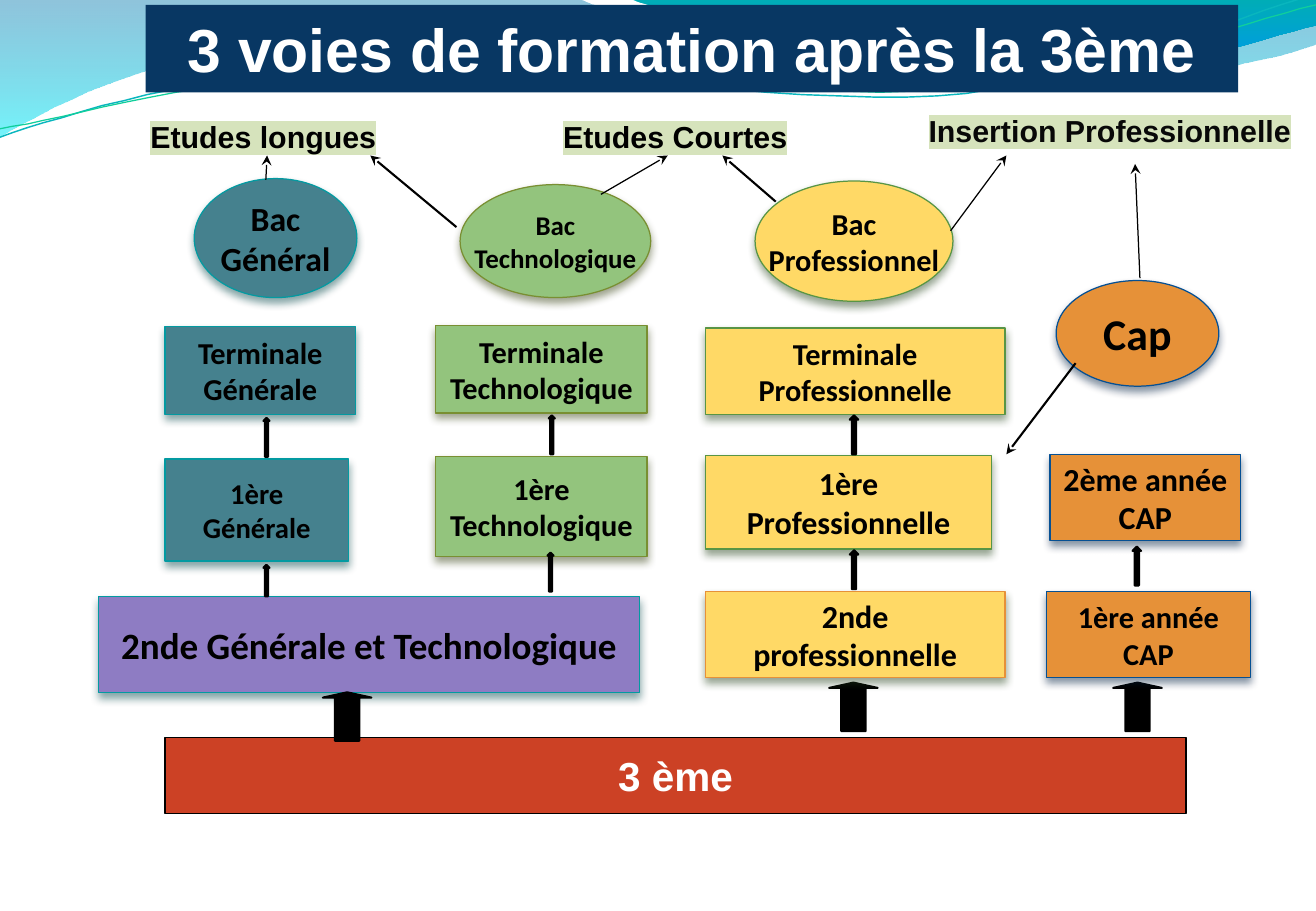
from lxml import etree
from pptx import Presentation
from pptx import util as u
from pptx.dml.color import RGBColor
from pptx.enum import shapes, text
from pptx.oxml.ns import qn

PX = 9144  # EMU in one px (100 px to the inch)
COLORS = {
    "black": "000000", "white": "FFFFFF", "navy": "083763", "red": "CC4125",
    "label": "080808", "highlight": "D6E3BC",
    "sky_top": "0079AF", "sky_bottom": "00EBF8",
    "sea_top": "00ADB6", "sea_bottom": "009BE5",
    "strand_teal": "09B6BE", "strand_green": "10CF9B",
}
# Each pathway: fill, line, shadow
PATHWAYS = {
    "general": ("45818E", "039AA1", "004548"),
    "techno": ("93C47D", "798F32", "343F11"),
    "pro": ("FFD966", "599545", "24421A"),
    "entry_pro": ("FFD966", "E69138", "24421A"),
    "cap": ("E69138", "065093", "002041"),
    "common": ("8E7CC3", "039AA1", "004548"),
}


def rgb(value):
    return RGBColor.from_string(COLORS.get(value, value))


def px(*lengths):
    return [u.Emu(round(length * PX)) for length in lengths]


def child(parent, tag, **attributes):
    node = etree.SubElement(parent, qn(tag))
    for key, value in attributes.items():
        node.set(key, str(value))
    return node


def write(shape, words, size, font="Calibri", color="black", align=text.PP_ALIGN.CENTER, wrap=True):
    frame = shape.text_frame
    frame.text = words
    frame.word_wrap = wrap
    frame.auto_size = text.MSO_AUTO_SIZE.NONE
    frame.vertical_anchor = text.MSO_ANCHOR.MIDDLE
    frame.margin_left = frame.margin_right = px(10)[0]
    frame.margin_top = frame.margin_bottom = px(5)[0]
    paragraph = frame.paragraphs[0]
    paragraph.alignment = align
    for run in paragraph.runs:
        run.font.size, run.font.name, run.font.bold = u.Pt(size), font, True
        run.font.color.rgb = rgb(color)


def block(slide, kind, box, fill, line, width=0.75, shadow=None):
    shape = slide.shapes.add_shape(kind, *px(*box))
    shape.shadow.inherit = False
    shape.fill.solid()
    shape.fill.fore_color.rgb = rgb(fill)
    shape.line.color.rgb = rgb(line)
    shape.line.width = u.Pt(width)
    if shadow:
        effects = shape._element.spPr.find(qn("a:effectLst"))
        outer = child(effects, "a:outerShdw", blurRad=u.Pt(5), dist=u.Pt(3), dir=5400000, rotWithShape=0)
        child(child(outer, "a:srgbClr", val=shadow), "a:alpha", val=47000)
    return shape


def up_arrow(slide, box, head=0.5):
    arrow = block(slide, shapes.MSO_SHAPE.UP_ARROW, box, "black", "black", 1.25)
    arrow.adjustments[0], arrow.adjustments[1] = 0.5, head


def trace(start, segments, steps=16):
    """Points of an outline: one point is a line, three are a Bézier curve."""
    points = [start]
    for segment in segments:
        if len(segment) == 1:
            points += segment
            continue
        corners = [points[-1], *segment]
        for step in range(1, steps + 1):
            t = step / steps
            weights = ((1 - t) ** 3, 3 * t * (1 - t) ** 2, 3 * t * t * (1 - t), t ** 3)
            points.append(tuple(sum(w * c[axis] for w, c in zip(weights, corners)) for axis in (0, 1)))
    return points


def wave_shape(slide, start, segments, closed):
    points = trace(start, segments)
    builder = slide.shapes.build_freeform(*points[0], scale=PX)
    builder.add_line_segments(points[1:], close=closed)
    shape = builder.convert_to_shape()
    shape.shadow.inherit = False
    return shape


# Waves across the top of the page
def draw_waves(slide):
    bands = [
        ((0, -1), [[(477, -1)], [(515, 17), (719, 63), (822, 63)], [(924, 63), (1038, 26), (1084, 9)],
                   [(1085, 36)], [(1066, 44), (942, 76), (808, 75)], [(674, 75), (414, 28), (279, 34)],
                   [(140, 35), (50, 83), (-1, 113)]],
         (("sky_top", 0, 44), ("sky_bottom", 1, 55))),
        ((519, -1), [[(552, 11), (739, 62), (833, 65)], [(927, 69), (1042, 32), (1084, 21)], [(1084, 0)]],
         (("sea_top", 0, 100), ("sea_bottom", 0.8, 100))),
    ]
    strands = [
        ((0, 113), [[(52, 95), (171, 58), (300, 53)], [(428, 47), (642, 88), (772, 79)],
                    [(902, 69), (1017, 14), (1081, -4)]], "strand_teal", 0.85),
        ((0, 106), [[(51, 98), (177, 62), (307, 57)], [(436, 52), (647, 83), (777, 74)],
                    [(906, 66), (1020, 19), (1084, 4)]], "strand_green", 0.75),
    ]
    for start, segments, stops in bands:
        band = wave_shape(slide, start, segments, True)
        band.line.fill.background()
        band.fill.gradient()
        band.fill.gradient_angle = 270
        for stop, (color, position, alpha) in zip(band.fill.gradient_stops, stops):
            stop.color.rgb, stop.position = rgb(color), position
        for node, stop in zip(band._element.spPr.iter(qn("a:srgbClr")), stops):
            child(node, "a:alpha", val=stop[2] * 1000)
    for start, segments, color, width in strands:
        strand = wave_shape(slide, start, segments, False)
        strand.fill.background()
        strand.line.color.rgb = rgb(color)
        strand.line.width = u.Pt(width)


# Title banner, in front of the waves
def draw_title(slide, box):
    title = slide.shapes.title
    title.left, title.top, title.width, title.height = px(*box)
    title.fill.solid()
    title.fill.fore_color.rgb = rgb("navy")
    write(title, "3 voies de formation après la 3ème", 36, "Arial", "white")
    slide.shapes._spTree.append(title._element)


# Starting year, the shared second year and the wide arrows
def draw_base(slide, origin):
    x, y = origin
    start = block(slide, shapes.MSO_SHAPE.RECTANGLE, (x + 55, y + 116, 841, 63), "red", "black")
    write(start, "3 ème", 24, "Arial", "white")
    fill, line, shadow = PATHWAYS["common"]
    common = block(slide, shapes.MSO_SHAPE.RECTANGLE, (x, y, 446, 79), fill, line, shadow=shadow)
    write(common, "2nde Générale et Technologique", 22)
    for dx, dy in ((185, 79), (602, 71), (836, 71)):
        up_arrow(slide, (x + dx, y + dy, 40, 40), 0.11)


# One pathway: its years, its diploma and the arrows between them
def draw_pathway(slide, origin, style, diploma, years, arrows):
    x, y = origin
    for words, size, (dx, dy, w, h), *other in years:
        fill, line, shadow = PATHWAYS[other[0] if other else style]
        year = block(slide, shapes.MSO_SHAPE.RECTANGLE, (x + dx, y + dy, w, h), fill, line, shadow=shadow)
        write(year, words, size)
    words, size, dx, w, h = diploma
    fill, line, shadow = PATHWAYS[style]
    oval = block(slide, shapes.MSO_SHAPE.OVAL, (x + dx, y, w, h), fill, line, shadow=shadow)
    write(oval, words, size, wrap=False)
    for dx, dy, w, h in arrows:
        up_arrow(slide, (x + dx, y + dy, w, h))


# Outcomes and the thin arrows leading to them
def draw_outcomes(slide, outcomes, links):
    for words, color, box in outcomes:
        outcome = slide.shapes.add_textbox(*px(*box))
        write(outcome, words, 18, "Arial", color, text.PP_ALIGN.LEFT)
        for latin in outcome._element.iter(qn("a:latin")):
            highlight = etree.Element(qn("a:highlight"))
            child(highlight, "a:srgbClr", val=COLORS["highlight"])
            latin.addprevious(highlight)
    for x1, y1, x2, y2, width in links:
        link = slide.shapes.add_connector(shapes.MSO_CONNECTOR.STRAIGHT, *px(x1, y1, x2, y2))
        link.line.color.rgb = rgb("black")
        link.line.width = u.Pt(width)
        child(link.line._get_or_add_ln(), "a:tailEnd", type="stealth")
        child(link._element.spPr, "a:effectLst")


def main():
    deck = Presentation()
    deck.slide_width, deck.slide_height = px(1084, 750)
    slide = deck.slides.add_slide(deck.slide_layouts[5])
    draw_waves(slide)
    draw_title(slide, (120, 4, 900, 72))
    draw_base(slide, (81, 491))
    draw_pathway(slide, (136, 147), "general", ("Bac\vGénéral", 20, 24, 134, 98),
                 [("1ère Générale", 17, (0, 231, 151, 84)), ("Terminale Générale", 18, (0, 122, 157, 72))],
                 [(81, 197, 5, 32), (81, 318, 5, 26)])
    draw_pathway(slide, (359, 152), "techno", ("Bac\vTechnologique", 16, 20, 157, 93),
                 [("1ère Technologique", 18, (0, 224, 174, 82)),
                  ("Terminale Technologique", 18, (0, 116, 174, 72))],
                 [(93, 190, 5, 32), (92, 303, 5, 32)])
    draw_pathway(slide, (581, 149), "pro", ("Bac\vProfessionnel", 18, 41, 163, 99),
                 [("2nde professionnelle", 19, (0, 338, 247, 71), "entry_pro"),
                  ("1ère Professionnelle", 19, (0, 226, 236, 77)),
                  ("Terminale Professionnelle", 18, (0, 121, 247, 71))],
                 [(119, 193, 7, 32), (119, 304, 7, 32)])
    draw_pathway(slide, (862, 231), "cap", ("Cap", 26, 8, 134, 87),
                 [("1ère année CAP", 18, (0, 256, 168, 71)), ("2ème année CAP", 19, (3, 143, 157, 71))],
                 [(71, 219, 7, 32)])
    draw_outcomes(slide,
                  [("Etudes longues", "black", (114, 92, 211, 40)),
                   ("Etudes Courtes", "black", (454, 92, 211, 40)),
                   ("Insertion Professionnelle", "label", (755, 87, 328, 40))],
                  [(886, 299, 829, 374, 1.25), (376, 187, 305, 128, 1.25), (495, 160, 550, 128, 0.75),
                   (639, 166, 595, 128, 1.25), (219, 148, 220, 128, 0.75), (783, 190, 829, 128, 0.75),
                   (939, 229, 935, 135, 0.75)])
    deck.save("out.pptx")


if __name__ == "__main__":
    main()
